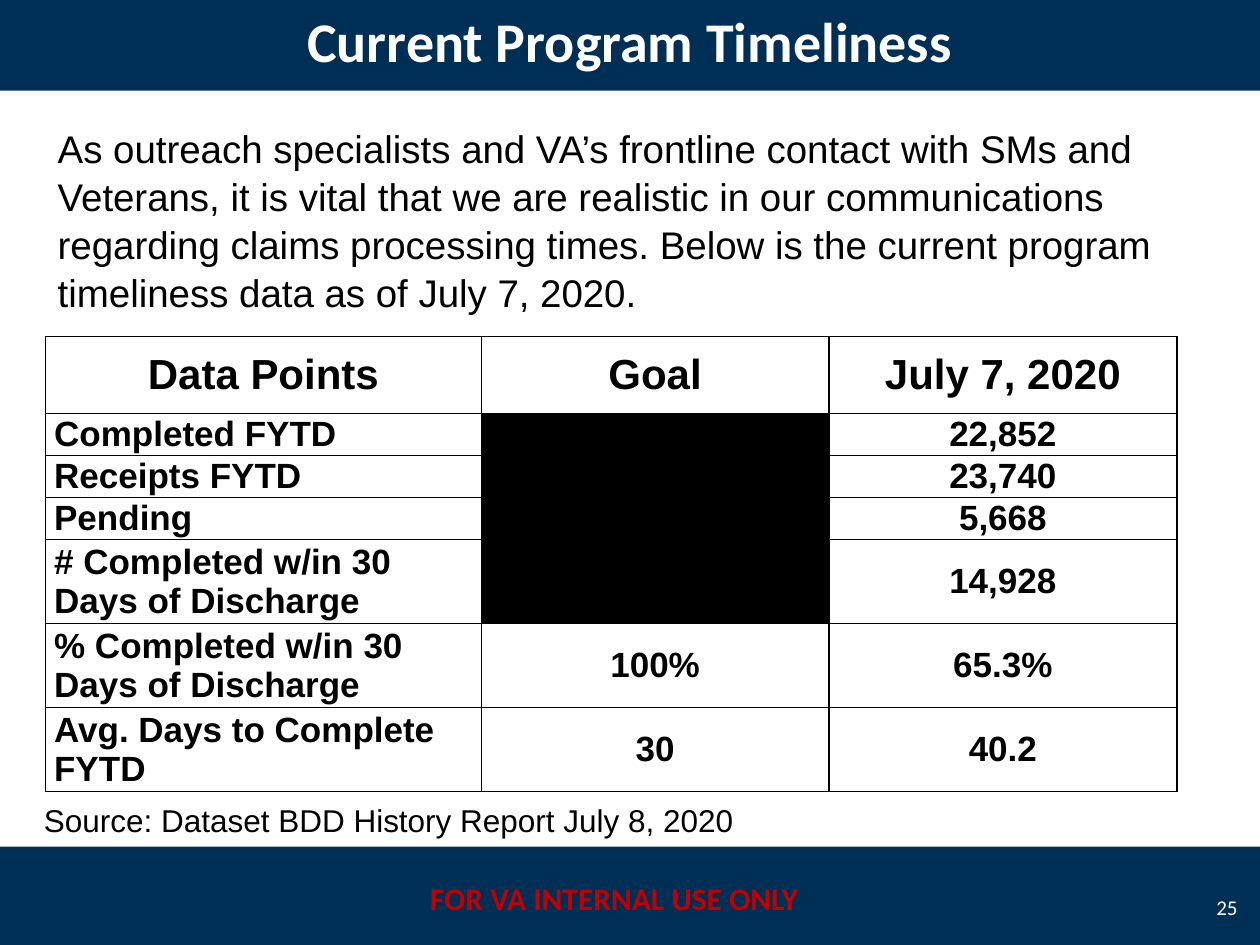
from dataclasses import dataclass

from lxml import etree
from pptx import Presentation
from pptx.dml.color import RGBColor
from pptx.enum.shapes import MSO_SHAPE
from pptx.enum.text import MSO_ANCHOR, PP_ALIGN
from pptx.oxml.ns import qn
from pptx.util import Inches, Pt

RECTANGLE = MSO_SHAPE.RECTANGLE
LEFT, CENTER, RIGHT = PP_ALIGN.LEFT, PP_ALIGN.CENTER, PP_ALIGN.RIGHT
TOP, MIDDLE = MSO_ANCHOR.TOP, MSO_ANCHOR.MIDDLE
BLANK_LAYOUT = 6


@dataclass(frozen=True)
class Theme:
    navy: str = "002F56"
    white: str = "FFFFFF"
    black: str = "000000"
    red: str = "C00000"
    heading_font: str = "Calibri"
    body_font: str = "Arial"
    title_size: int = 32
    header_size: int = 24
    body_size: int = 22
    cell_size: int = 20
    note_size: int = 18
    number_size: int = 12
    border_width: int = 1


THEME = Theme()


@dataclass(frozen=True)
class Style:
    size: int
    font: str = THEME.body_font
    color: str = THEME.black
    bold: bool = False


@dataclass(frozen=True)
class TextBlock:
    place: tuple[float, float, float, float]
    paragraphs: tuple[str, ...]
    style: Style
    align: PP_ALIGN = LEFT
    anchor: MSO_ANCHOR = TOP
    line_spacing: float = 1.0


@dataclass(frozen=True)
class DataPoint:
    label: str
    goal: str
    value: str
    lines: int = 1


BANDS = ((0, -0.08, 10, 0.8), (0, 6.72, 10, 0.8))

TEXT_BLOCKS = (
    TextBlock((3.25, 6.93, 3.25, 0.4), ("FOR VA INTERNAL USE ONLY",),
              Style(THEME.note_size, THEME.heading_font, THEME.red, True), CENTER),
    TextBlock(BANDS[0], ("Current Program Timeliness",),
              Style(THEME.title_size, THEME.heading_font, THEME.white, True), CENTER, MIDDLE),
    TextBlock((9.5, 7, 0.42, 0.4), ("25",),
              Style(THEME.number_size, THEME.heading_font, THEME.white), RIGHT, MIDDLE),
    TextBlock((0.36, 0.93, 9.5, 1.58),
              ("As outreach specialists and VA’s frontline contact with SMs and",
               "Veterans, it is vital that we are realistic in our communications "
               "regarding claims processing times. Below is the current program "
               "timeliness data as of July 7, 2020."),
              Style(THEME.body_size), line_spacing=1.04),
    TextBlock((0.25, 6.31, 6.25, 0.4), ("Source: Dataset BDD History Report July 8, 2020",),
              Style(THEME.note_size)),
)

TABLE_PLACE = (0.36, 2.67, 8.98, 3.61)
COLUMN_WIDTHS = (3.46, 2.76, 2.76)
HEADER_HEIGHT = 0.61
LINE_HEIGHT = 1 / 3
HEADERS = ("Data Points", "Goal", "July 7, 2020")
DATA_POINTS = (
    DataPoint("Completed FYTD", "", "22,852"),
    DataPoint("Receipts FYTD", "", "23,740"),
    DataPoint("Pending", "", "5,668"),
    DataPoint("# Completed w/in 30 Days of Discharge", "", "14,928", 2),
    DataPoint("% Completed w/in 30 Days of Discharge", "100%", "65.3%", 2),
    DataPoint("Avg. Days to Complete FYTD", "30", "40.2", 2),
)


def add_span(para, text: str, style: Style) -> None:
    span = para.add_run()
    span.text = text
    span.font.name = style.font
    span.font.size = Pt(style.size)
    span.font.bold = style.bold
    span.font.color.rgb = RGBColor.from_string(style.color)


def add_band(page, place: tuple[float, float, float, float]) -> None:
    band = page.shapes.add_shape(RECTANGLE, *map(Inches, place))
    band.shadow.inherit = False
    band.fill.solid()
    band.fill.fore_color.rgb = RGBColor.from_string(THEME.navy)
    band.line.fill.background()


def add_text(page, block: TextBlock) -> None:
    frame = page.shapes.add_textbox(*map(Inches, block.place)).text_frame
    frame.word_wrap = True
    frame.vertical_anchor = block.anchor
    for index, text in enumerate(block.paragraphs):
        para = frame.add_paragraph() if index else frame.paragraphs[0]
        para.alignment = block.align
        para.line_spacing = block.line_spacing
        add_span(para, text, block.style)


def set_borders(cell) -> None:
    properties = cell._tc.get_or_add_tcPr()
    for side in ("lnL", "lnR", "lnT", "lnB"):
        line = etree.SubElement(properties, qn(f"a:{side}"), w=str(Pt(THEME.border_width)))
        fill = etree.SubElement(line, qn("a:solidFill"))
        etree.SubElement(fill, qn("a:srgbClr"), val=THEME.black)


def fill_cell(cell, text: str, size: int, align: PP_ALIGN) -> None:
    cell.margin_left = cell.margin_right = Inches(0.07)
    cell.margin_top = cell.margin_bottom = 0
    cell.vertical_anchor = MIDDLE
    set_borders(cell)
    # A cell without a value is blacked out
    cell.fill.solid()
    cell.fill.fore_color.rgb = RGBColor.from_string(THEME.white if text else THEME.black)
    if text:
        para = cell.text_frame.paragraphs[0]
        para.alignment = align
        add_span(para, text, Style(size, bold=True))


def add_timeliness_table(page) -> None:
    table = page.shapes.add_table(
        len(DATA_POINTS) + 1, len(HEADERS), *map(Inches, TABLE_PLACE)).table
    table.first_row = table.horz_banding = False
    for column, width in zip(table.columns, COLUMN_WIDTHS):
        column.width = Inches(width)

    # Header row
    table.rows[0].height = Inches(HEADER_HEIGHT)
    for column, text in enumerate(HEADERS):
        fill_cell(table.cell(0, column), text, THEME.header_size, CENTER)

    # Data rows
    for row, point in enumerate(DATA_POINTS, start=1):
        table.rows[row].height = Inches(LINE_HEIGHT * point.lines)
        for column, text in enumerate((point.label, point.goal, point.value)):
            align = CENTER if column else LEFT
            fill_cell(table.cell(row, column), text, THEME.cell_size, align)


def main() -> None:
    deck = Presentation()
    deck.slide_width, deck.slide_height = Inches(10), Inches(7.5)
    page = deck.slides.add_slide(deck.slide_layouts[BLANK_LAYOUT])
    for place in BANDS:
        add_band(page, place)
    for block in TEXT_BLOCKS:
        add_text(page, block)
    add_timeliness_table(page)
    deck.save("out.pptx")


if __name__ == "__main__":
    main()
